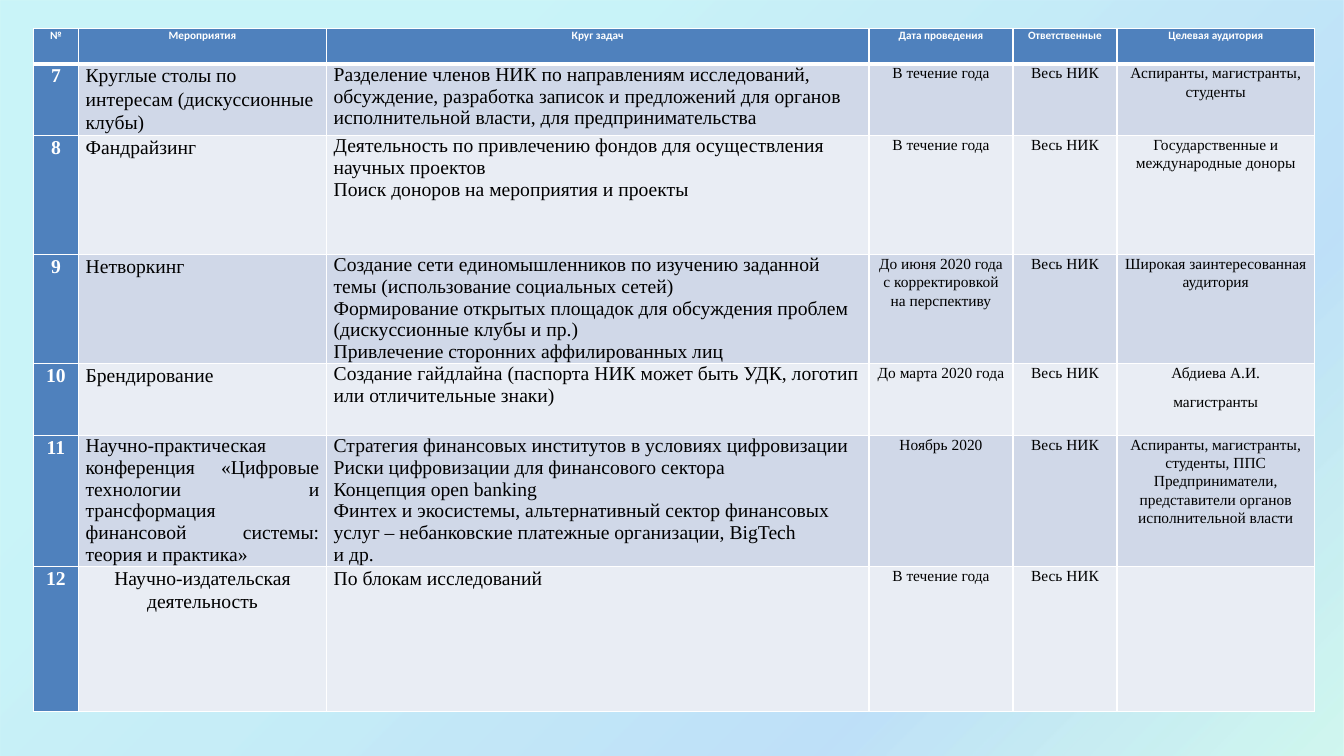
from lxml.etree import SubElement
from pptx import Presentation
from pptx.dml.color import RGBColor
from pptx.enum.shapes import MSO_SHAPE
from pptx.enum.text import PP_ALIGN
from pptx.oxml.ns import qn
from pptx.util import Cm, Pt

WHITE = RGBColor(0xFF, 0xFF, 0xFF)
BLACK = RGBColor(0x00, 0x00, 0x00)
BLUE = RGBColor(0x4F, 0x81, 0xBD)
BAND_DARK = RGBColor(0xD0, 0xD8, 0xE8)
BAND_LIGHT = RGBColor(0xE9, 0xED, 0xF4)
CYAN = RGBColor(0x21, 0xD6, 0xE0)
AZURE = RGBColor(0x00, 0x87, 0xE6)
GREEN = RGBColor(0x03, 0xD4, 0xA8)
NAVY = RGBColor(0x00, 0x5C, 0xBF)

BACKDROP_STOPS = [(25, CYAN, 23), (75, AZURE, 25), (100, GREEN, 18), (100, NAVY, 26)]
COLUMN_WIDTHS = [1.14, 6.25, 13.67, 3.63, 2.62, 4.98]
ROW_HEIGHTS = [0.9, 1.8, 3, 2.74, 1.82, 3.3, 3.66]
HEADINGS = ["№", "Мероприятия", "Круг задач", "Дата проведения", "Ответственные", "Целевая аудитория"]
TEAM = "Весь НИК"
ALL_YEAR = "В течение года"
EVENTS = [
    ["7", "Круглые столы по интересам (дискуссионные клубы)",
     "Разделение членов НИК по направлениям исследований, обсуждение, разработка записок "
     "и предложений для органов исполнительной власти, для предпринимательства",
     ALL_YEAR, TEAM, "Аспиранты, магистранты, студенты"],
    ["8", "Фандрайзинг",
     "Деятельность по привлечению фондов для осуществления научных проектов\n"
     "Поиск доноров на мероприятия и проекты",
     ALL_YEAR, TEAM, "Государственные и международные доноры"],
    ["9", "Нетворкинг",
     "Создание сети единомышленников по изучению заданной темы (использование социальных сетей)\n"
     "Формирование открытых площадок для обсуждения проблем (дискуссионные клубы и пр.)\n"
     "Привлечение сторонних аффилированных лиц",
     "До июня 2020 года с корректировкой на перспективу", TEAM,
     "Широкая заинтересованная аудитория"],
    ["10", "Брендирование",
     "Создание гайдлайна (паспорта НИК может быть УДК, логотип или отличительные знаки)",
     "До марта 2020 года", TEAM, "Абдиева А.И.\nмагистранты"],
    ["11", "Научно-практическая конференция «Цифровые технологии и трансформация "
     "финансовой системы: теория и практика»",
     "Стратегия финансовых институтов в условиях цифровизации\n"
     "Риски цифровизации для финансового сектора\n"
     "Концепция open banking\n"
     "Финтех и экосистемы, альтернативный сектор финансовых услуг – "
     "небанковские платежные организации, BigTech\n"
     "и др.",
     "Ноябрь 2020", TEAM,
     "Аспиранты, магистранты, студенты, ППС Предприниматели, представители органов исполнительной власти"],
    ["12", "Научно-издательская деятельность", "По блокам исследований", ALL_YEAR, TEAM, ""],
]

HEADER_FORMAT = dict(font="Calibri", size=8, color=WHITE, bold=True, align=PP_ALIGN.CENTER)
NUMBER_FORMAT = dict(size=14, color=WHITE, bold=True, align=PP_ALIGN.CENTER)
EVENT_FORMAT = dict(size=14)
TASK_FORMAT = dict(size=14, line=1, after=0)
DETAIL_FORMAT = dict(size=11, align=PP_ALIGN.CENTER)
COLUMN_FORMATS = [NUMBER_FORMAT, EVENT_FORMAT, TASK_FORMAT] + [DETAIL_FORMAT] * 3
SPECIAL_FORMATS = {
    ("11", 1): dict(align=PP_ALIGN.JUSTIFY, line=1, after=0),
    ("12", 1): dict(align=PP_ALIGN.CENTER),
    ("12", 2): dict(line=1.07, after=8),
}


def write(frame, text, font="Times New Roman", size=14, color=BLACK, bold=False,
          align=PP_ALIGN.LEFT, line=1.07, after=8):
    for index, words in enumerate(text.split("\n")):
        para = frame.add_paragraph() if index else frame.paragraphs[0]
        para.alignment = align
        para.line_spacing = line
        para.space_after = Pt(after)
        span = para.add_run()
        span.text = words
        span.font.name = font
        span.font.size = Pt(size)
        span.font.bold = bold
        span.font.color.rgb = color


class Page:
    def __init__(self, deck):
        self.slide = deck.slides.add_slide(deck.slide_layouts[6])
        self.width = deck.slide_width
        self.height = deck.slide_height

    def backdrop(self, stops, angle):
        box = self.slide.shapes.add_shape(MSO_SHAPE.RECTANGLE, 0, 0, self.width, self.height)
        box.shadow.inherit = False
        box.line.fill.background()
        box.fill.gradient()
        gradient = box._element.spPr.find(qn("a:gradFill"))
        stop_list = gradient.find(qn("a:gsLst"))
        for stop in list(stop_list):
            stop_list.remove(stop)
        for position, color, opacity in stops:
            stop = SubElement(stop_list, qn("a:gs"), pos=str(position * 1000))
            shade = SubElement(stop, qn("a:srgbClr"), val=str(color))
            SubElement(shade, qn("a:alpha"), val=str(opacity * 1000))
        direction = gradient.find(qn("a:lin"))
        direction.set("ang", str(angle * 60000))
        direction.set("scaled", "0")

    def table(self, left, top, widths, heights):
        frame = self.slide.shapes.add_table(len(heights), len(widths), Cm(left), Cm(top),
                                            Cm(sum(widths)), Cm(sum(heights)))
        grid = frame.table
        grid.horz_banding = False
        for column, width in zip(grid.columns, widths):
            column.width = Cm(width)
        for row, height in zip(grid.rows, heights):
            row.height = Cm(height)
        return grid

    def cell(self, cell, text, fill, side_margin, borders, **text_format):
        properties = cell._tc.get_or_add_tcPr()
        for side, points in zip("LRTB", borders):
            edge = SubElement(properties, qn("a:ln" + side), w=str(Pt(points)))
            paint = SubElement(edge, qn("a:solidFill"))
            SubElement(paint, qn("a:srgbClr"), val=str(WHITE))
        cell.fill.solid()
        cell.fill.fore_color.rgb = fill
        cell.margin_left = cell.margin_right = Cm(side_margin)
        cell.margin_top = cell.margin_bottom = 0
        if text:
            write(cell.text_frame, text, **text_format)


def main():
    deck = Presentation()
    deck.slide_width = Cm(33.87)
    deck.slide_height = Cm(19.05)
    page = Page(deck)
    page.backdrop(BACKDROP_STOPS, 45)
    plan = page.table(0.84, 0.71, COLUMN_WIDTHS, ROW_HEIGHTS)
    for column, heading in enumerate(HEADINGS):
        page.cell(plan.cell(0, column), heading, BLUE, 0.12, (1, 1, 1, 3), **HEADER_FORMAT)
    for row, event in enumerate(EVENTS, 1):
        band = BAND_DARK if row % 2 else BAND_LIGHT
        borders = (1, 1, 3 if row == 1 else 1, 1)
        for column, text in enumerate(event):
            text_format = {**COLUMN_FORMATS[column], **SPECIAL_FORMATS.get((event[0], column), {})}
            page.cell(plan.cell(row, column), text, band if column else BLUE, 0.18, borders,
                      **text_format)
    deck.save("out.pptx")


if __name__ == "__main__":
    main()
